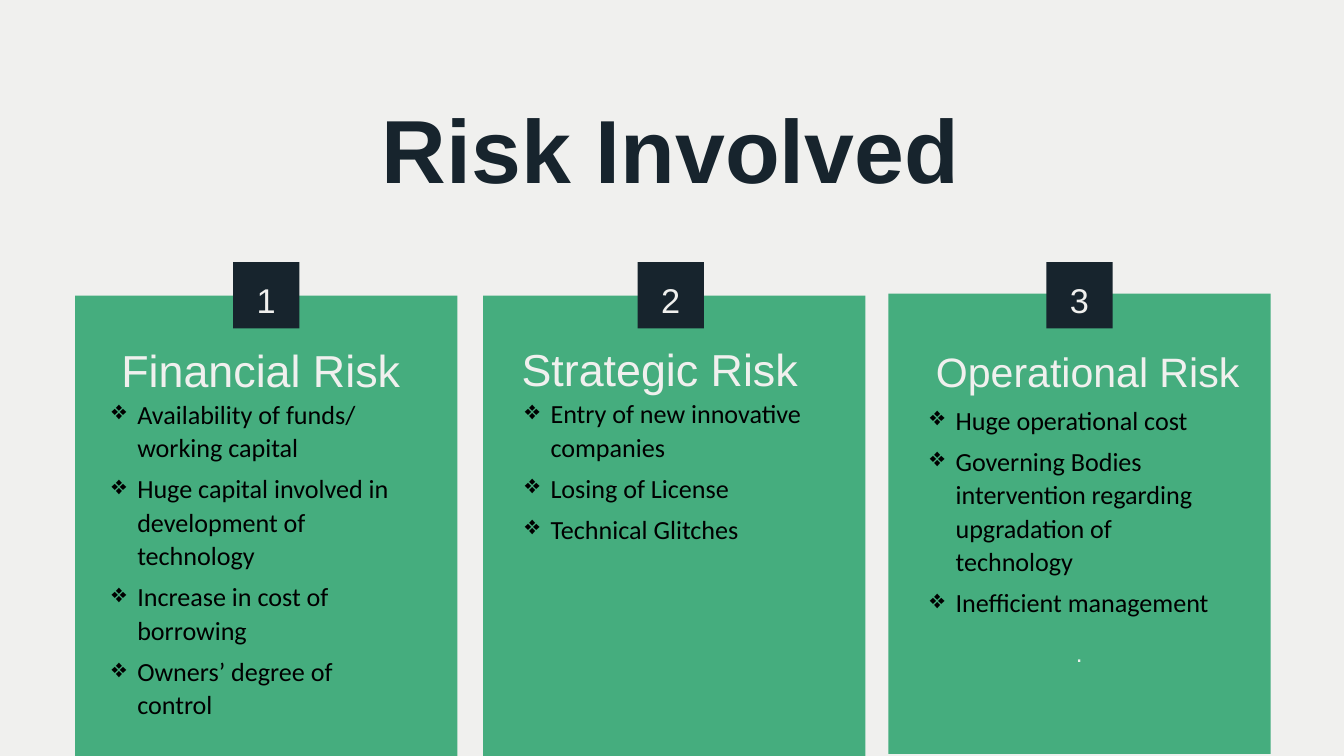
from lxml import etree
from pptx import Presentation
from pptx import util as u
from pptx.dml.color import RGBColor
from pptx.enum import shapes, text
from pptx.oxml import ns

# Content; positions in cm: heading and list are (left, top, width, height)
TITLE = "Risk Involved"
RISKS = [
    {
        "name": "Financial Risk", "size": 48, "spacing": 1.26,
        "card": (2.84, 11.18), "badge_left": 8.81,
        "heading": (4.22, 12.42, 11.28, 2.08), "list": (4.22, 14.96, 11.28, 12.7),
        "points": ["Availability of funds/ working capital",
                   "Huge capital involved in development of technology",
                   "Increase in cost of borrowing",
                   "Owners’ degree of control"],
    },
    {
        "name": "Strategic Risk", "size": 48, "spacing": 1.26,
        "card": (18.26, 11.18), "badge_left": 24.1,
        "heading": (19.3, 12.4, 11.28, 2.08), "list": (19.84, 14.94, 11.28, 7.21),
        "points": ["Entry of new innovative companies",
                   "Losing of License",
                   "Technical Glitches"],
    },
    {
        "name": "Operational Risk", "size": 44, "spacing": 1.37,
        "card": (33.58, 11.1), "badge_left": 39.55,
        "heading": (35.05, 12.4, 12.14, 2.13), "list": (35.15, 15.19, 11.28, 9.78),
        "points": ["Huge operational cost",
                   "Governing Bodies intervention regarding upgradation of technology",
                   "Inefficient management"],
        "closing": ".",
    },
]
LIGHT, DARK, GREEN, BLACK = "F0F0EE", "17242D", "45AD7E", "000000"
CARD_WIDTH, CARD_HEIGHT = 14.45, 17.4
BADGE_TOP, BADGE_SIZE = 9.91, 2.51
NUMBER_WIDTH, NUMBER_HEIGHT, NUMBER_TOP = 1.73, 1.4, 10.54
BULLET_INDENT = u.Cm(0.97)


def color(value):
    return RGBColor.from_string(value)


def add_block(slide, left, top, width, height, fill):
    shape = slide.shapes.add_shape(shapes.MSO_SHAPE.RECTANGLE,
                                   u.Cm(left), u.Cm(top), u.Cm(width), u.Cm(height))
    shape.shadow.inherit = False
    shape.fill.solid()
    shape.fill.fore_color.rgb = color(fill)
    shape.line.fill.background()


def add_frame(slide, left, top, width, height):
    frame = slide.shapes.add_textbox(u.Cm(left), u.Cm(top),
                                     u.Cm(width), u.Cm(height)).text_frame
    frame.margin_left = frame.margin_top = frame.margin_right = frame.margin_bottom = 0
    frame.word_wrap = True
    frame.auto_size = text.MSO_AUTO_SIZE.SHAPE_TO_FIT_TEXT
    return frame


def write(paragraph, words, size, fill=LIGHT, font="Arial", bold=False,
          align=text.PP_ALIGN.CENTER, spacing=None, before=None):
    paragraph.text = words
    paragraph.alignment = align
    paragraph.line_spacing = spacing
    if before:
        paragraph.space_before = u.Pt(before)
    paragraph.font.name = font
    paragraph.font.size = u.Pt(size)
    paragraph.font.bold = bold
    paragraph.font.color.rgb = color(fill)


def add_bullet(paragraph):
    properties = paragraph._p.get_or_add_pPr()
    properties.set("marL", str(BULLET_INDENT))
    properties.set("indent", str(-BULLET_INDENT))
    bullet = etree.Element(ns.qn("a:buChar"), char="❖")
    # Bullet goes after spacing and before the default run properties
    properties.find(ns.qn("a:defRPr")).addprevious(bullet)


def add_points(slide, risk):
    frame = add_frame(slide, *risk["list"])
    for index, point in enumerate(risk["points"]):
        paragraph = frame.paragraphs[0] if index == 0 else frame.add_paragraph()
        write(paragraph, point, 28, BLACK, "Calibri", align=text.PP_ALIGN.LEFT,
              spacing=1.07, before=8 if index else None)
        add_bullet(paragraph)
    if "closing" in risk:
        write(frame.add_paragraph(), risk["closing"], 26, spacing=1.42, before=8)


def add_risk(slide, number, risk):
    # Card with its numbered badge
    add_block(slide, *risk["card"], CARD_WIDTH, CARD_HEIGHT, GREEN)
    add_block(slide, risk["badge_left"], BADGE_TOP, BADGE_SIZE, BADGE_SIZE, DARK)
    number_left = risk["badge_left"] + (BADGE_SIZE - NUMBER_WIDTH) / 2
    frame = add_frame(slide, number_left, NUMBER_TOP, NUMBER_WIDTH, NUMBER_HEIGHT)
    write(frame.paragraphs[0], str(number), 36.8)
    # Heading and bullet list
    frame = add_frame(slide, *risk["heading"])
    write(frame.paragraphs[0], risk["name"], risk["size"], spacing=risk["spacing"])
    add_points(slide, risk)


def main():
    presentation = Presentation()
    presentation.slide_width, presentation.slide_height = u.Cm(50.8), u.Cm(28.58)
    slide = presentation.slides.add_slide(presentation.slide_layouts[6])
    slide.background.fill.solid()
    slide.background.fill.fore_color.rgb = color(LIGHT)

    for number, risk in enumerate(RISKS, start=1):
        add_risk(slide, number, risk)

    # Slide title
    frame = add_frame(slide, 2.77, 3.56, 45.16, 3.48)
    write(frame.paragraphs[0], TITLE, 96, DARK, bold=True)
    presentation.save("out.pptx")


if __name__ == "__main__":
    main()
